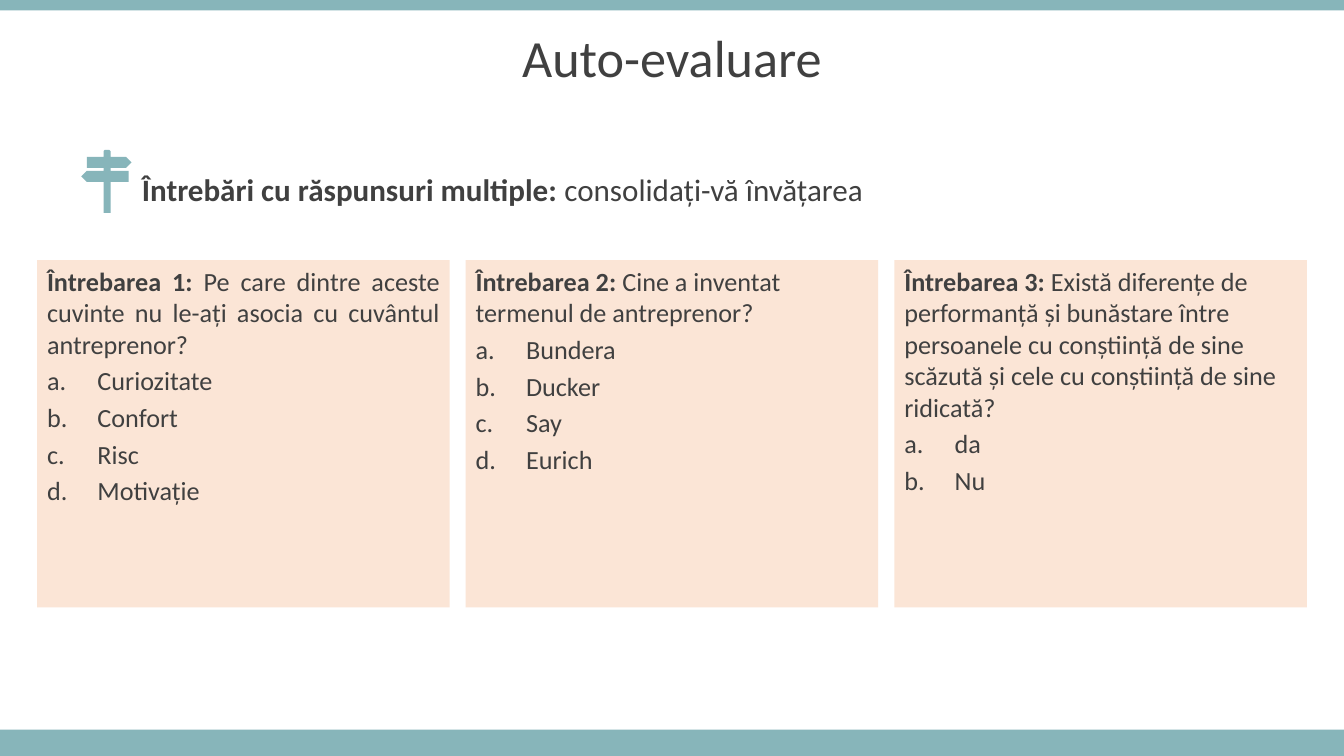
"""Build the self-assessment slide with three multiple-choice questions."""
import math

from lxml import etree
from pptx import Presentation
from pptx import util as u
from pptx.dml.color import RGBColor
from pptx.enum import shapes, text
from pptx.oxml.ns import qn

FONT = "Calibri"
TEAL, PEACH, GREY = "87B5BA", "FBE5D6", "404040"
WIDTH, HEIGHT = 960, 540
QUESTION_SIZE = 18.7
OPTION_INDENT = 36
LEFT, JUSTIFY = text.PP_ALIGN.LEFT, text.PP_ALIGN.JUSTIFY

QUESTIONS = [
    ("Întrebarea 1: ",
     "Pe care dintre aceste cuvinte nu le-ați asocia cu cuvântul antreprenor?",
     ["Curiozitate", "Confort", "Risc", "Motivație"], JUSTIFY),
    ("Întrebarea 2: ", "Cine a inventat termenul de antreprenor?",
     ["Bundera", "Ducker", "Say", "Eurich"], LEFT),
    ("Întrebarea 3: ",
     "Există diferențe de performanță și bunăstare între persoanele cu conștiință "
     "de sine scăzută și cele cu conștiință de sine ridicată?",
     ["da", "Nu"], LEFT),
]


def colour(value):
    """Turn a hex string into a colour."""
    return RGBColor.from_string(value)


def paint(shape, fill):
    """Give a shape a plain fill without line or shadow."""
    shape.shadow.inherit = False
    shape.fill.solid()
    shape.fill.fore_color.rgb = colour(fill)
    shape.line.fill.background()


def style(para, size, align=LEFT):
    """Set the font and alignment of a paragraph."""
    para.alignment = align
    para.font.name = FONT
    para.font.size = u.Pt(size)
    para.font.color.rgb = colour(GREY)


def add_lead(para, lead, rest):
    """Write a bold lead followed by regular text."""
    for words, bold in ((lead, True), (rest, False)):
        span = para.add_run()
        span.text = words
        span.font.bold = bold


def add_rectangle(page, left, top, width, height, fill):
    """Draw a filled rectangle."""
    box = page.shapes.add_shape(shapes.MSO_SHAPE.RECTANGLE, u.Pt(left), u.Pt(top),
                                u.Pt(width), u.Pt(height))
    paint(box, fill)
    return box


def add_title(page, left, top, width, height):
    """Place the slide title in its placeholder."""
    title = page.shapes.title
    title.left, title.top = u.Pt(left), u.Pt(top)
    title.width, title.height = u.Pt(width), u.Pt(height)
    frame = title.text_frame
    frame.text = "Auto-evaluare"
    frame.auto_size = text.MSO_AUTO_SIZE.NONE
    frame.vertical_anchor = text.MSO_ANCHOR.MIDDLE
    para = frame.paragraphs[0]
    style(para, 37.3, text.PP_ALIGN.CENTER)
    para.line_spacing = 0.9


def add_subtitle(page, left, top, width, height):
    """Place the line that introduces the questions."""
    box = page.shapes.add_textbox(u.Pt(left), u.Pt(top), u.Pt(width), u.Pt(height))
    frame = box.text_frame
    frame.word_wrap = True
    frame.vertical_anchor = text.MSO_ANCHOR.MIDDLE
    para = frame.paragraphs[0]
    style(para, 22.2)
    para.line_spacing = 0.8
    add_lead(para, "Întrebări cu răspunsuri multiple: ", "consolidați-vă învățarea")


def add_signpost(page, left, top):
    """Draw a signpost with one board pointing each way."""
    centre, radius = 18, 2.5
    near, far = centre - radius, centre + radius
    cap = [(centre - radius * math.cos(math.radians(angle)),
            radius - radius * math.sin(math.radians(angle)))
           for angle in range(0, 181, 20)]
    right_board = [(far, 5.8), (32, 5.8), (36, 9.7), (32, 13.6), (far, 13.6)]
    lower_right = [(far, 16), (33, 16), (33, 23.8), (far, 23.8)]
    foot = [(far, 46), (near, 46)]
    left_board = [(near, 23.8), (4, 23.8), (0, 19.9), (4, 16), (near, 16)]
    upper_left = [(near, 13.6), (3.5, 13.6), (3.5, 5.8), (near, 5.8)]
    outline = cap + right_board + lower_right + foot + left_board + upper_left
    points = [(left + across, top + down) for across, down in outline]
    builder = page.shapes.build_freeform(*points[0], scale=u.Pt(1))
    builder.add_line_segments(points[1:], close=True)
    paint(builder.convert_to_shape(), TEAL)


def add_letter(para):
    """Number a paragraph with letters and a hanging indent."""
    properties = para._p.get_or_add_pPr()
    properties.set("marL", str(u.Pt(OPTION_INDENT)))
    properties.set("indent", str(-u.Pt(OPTION_INDENT)))
    etree.SubElement(properties, qn("a:buFont"), typeface="+mj-lt")
    etree.SubElement(properties, qn("a:buAutoNum"), type="alphaLcPeriod")
    for defaults in properties.findall(qn("a:defRPr")):
        properties.append(defaults)


def add_question(page, left, top, width, height, question):
    """Draw a card with a question and its lettered options."""
    lead, wording, options, align = question
    frame = add_rectangle(page, left, top, width, height, PEACH).text_frame
    frame.word_wrap = True
    frame.vertical_anchor = text.MSO_ANCHOR.TOP
    style(frame.paragraphs[0], QUESTION_SIZE, align)
    add_lead(frame.paragraphs[0], lead, wording)
    for option in options:
        para = frame.add_paragraph()
        para.text = option
        style(para, QUESTION_SIZE)
        para.space_before = u.Pt(0.2 * QUESTION_SIZE)
        add_letter(para)


def add_questions(page, left, top, width, height, gap):
    """Lay the question cards out in equal columns."""
    card = (width - gap * (len(QUESTIONS) - 1)) / len(QUESTIONS)
    for column, question in enumerate(QUESTIONS):
        add_question(page, left + column * (card + gap), top, card, height, question)


def main():
    """Build and save the deck."""
    deck = Presentation()
    deck.slide_width, deck.slide_height = u.Pt(WIDTH), u.Pt(HEIGHT)
    page = deck.slides.add_slide(deck.slide_layouts.get_by_name("Title Only"))
    add_rectangle(page, 0, 521.2, WIDTH, HEIGHT - 521.2, TEAL)
    add_rectangle(page, 0, 0, WIDTH, 7.5, TEAL)
    add_title(page, 0, 13, WIDTH, 60.5)
    add_subtitle(page, 94.3, 123, 642, 29.5)
    add_signpost(page, 58.5, 106.5)
    add_questions(page, 26.5, 185.8, 907, 248, 11.5)
    deck.save("out.pptx")


if __name__ == "__main__":
    main()
